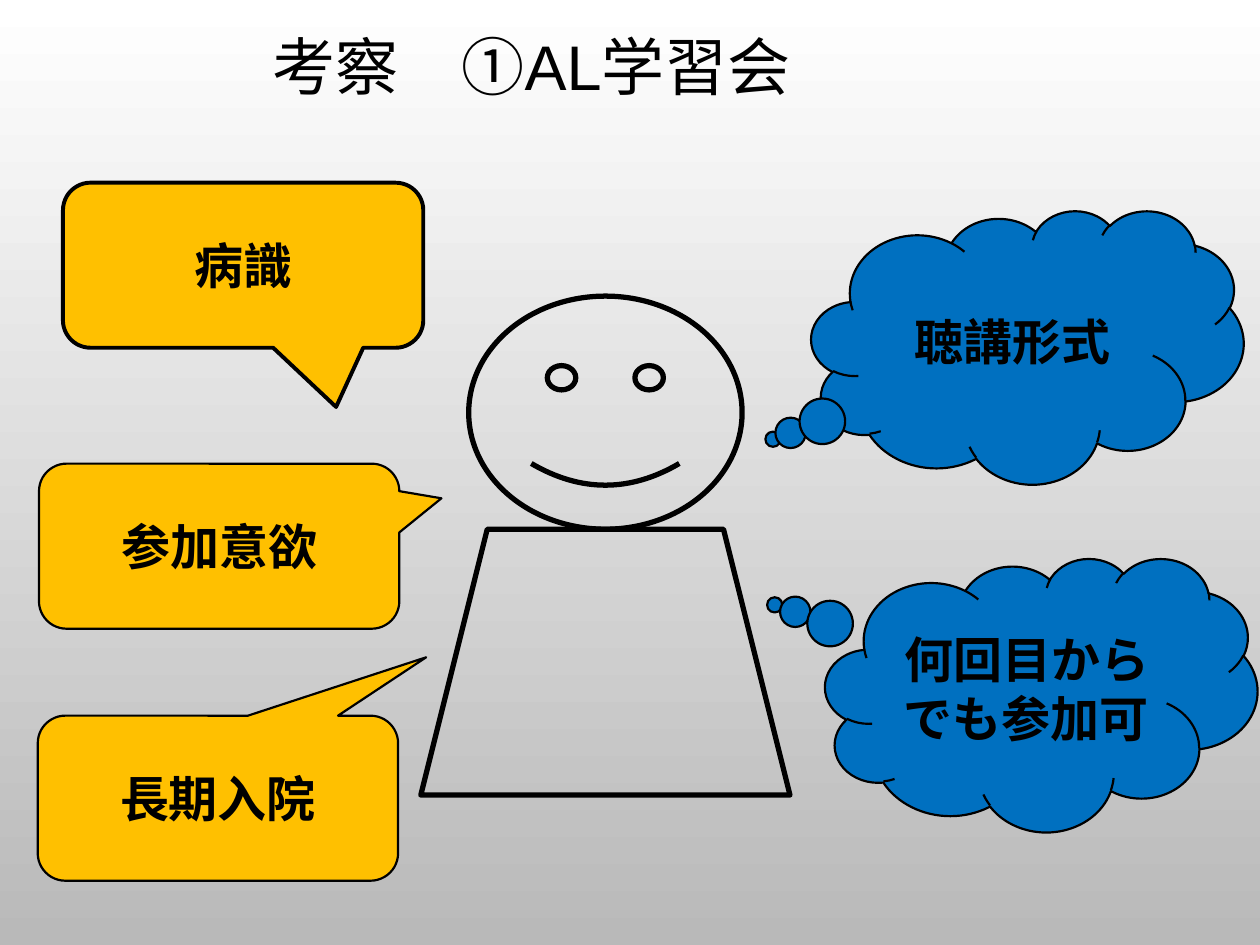
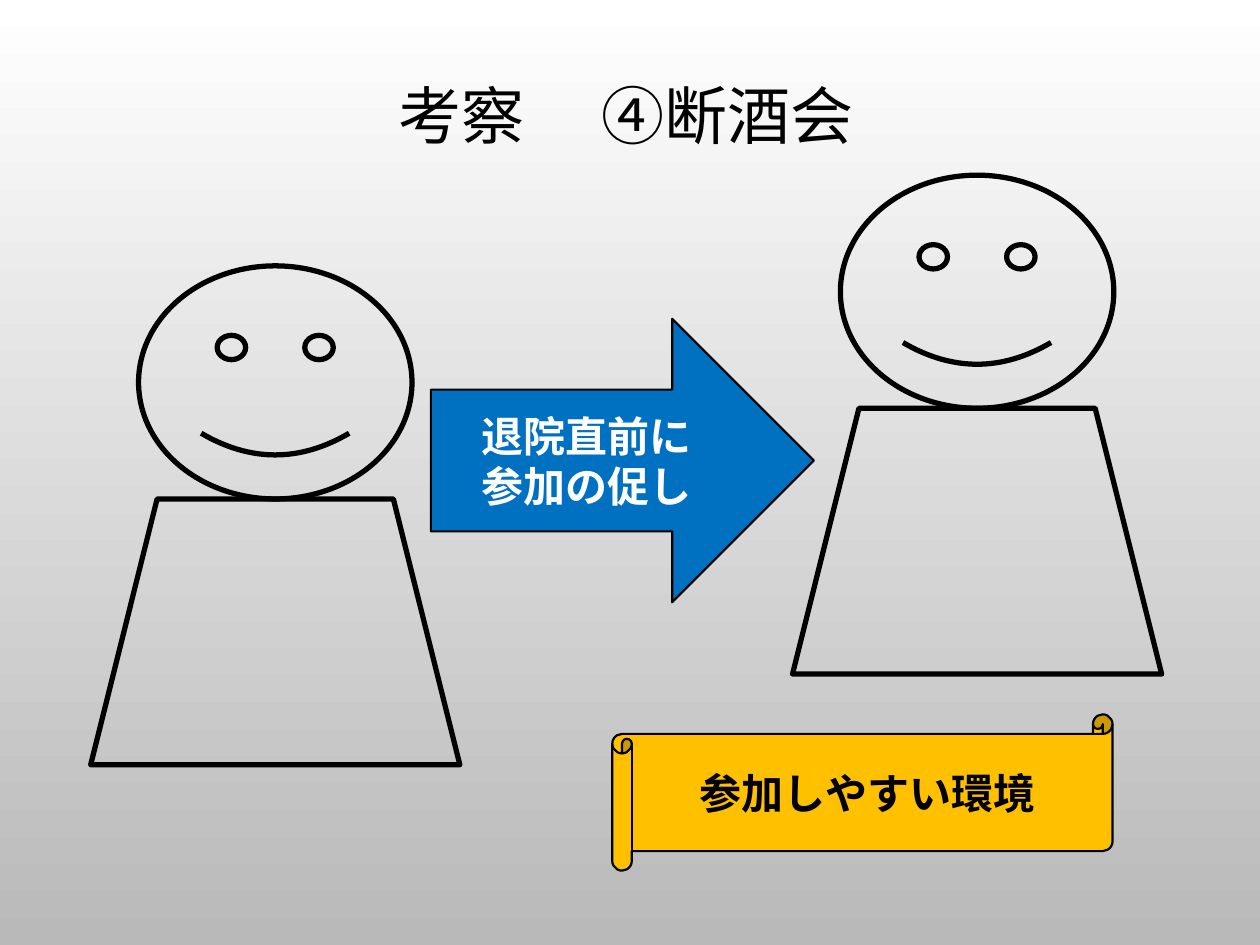
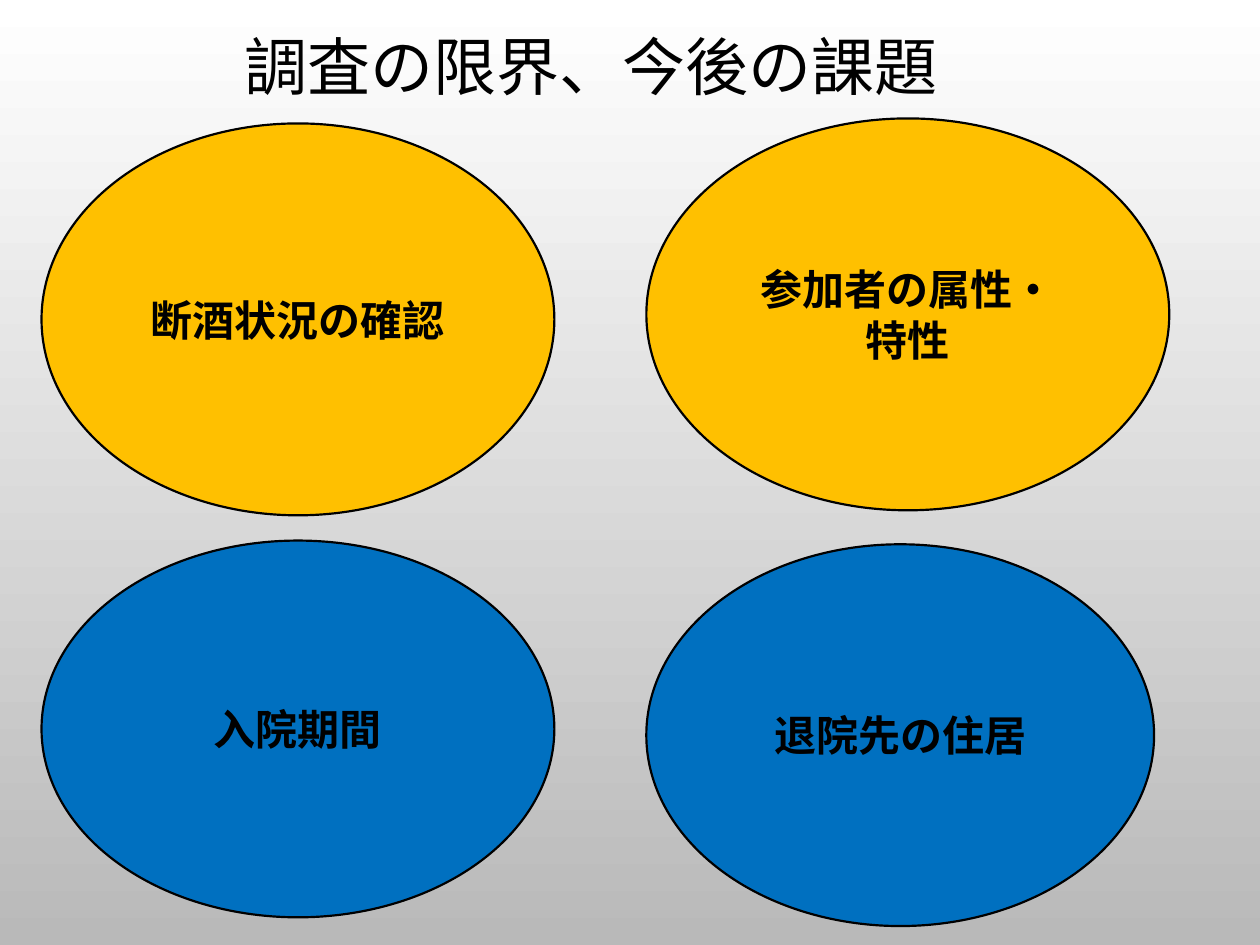
from pptx import Presentation
from pptx import util as u
from pptx.dml.color import RGBColor
from pptx.enum import shapes, text

# Shared look
BLACK, WHITE, GREY = "000000", "FFFFFF", "B9B9B9"
AMBER, BLUE = "FFC000", "0070C0"
FONT = "Cabin"
TITLE_SIZE = 36
THIN, MEDIUM, THICK = 1.25, 2.25, 3

# The slide is a grid of 100 columns by 75 rows
WIDTH, HEIGHT = u.Inches(10), u.Inches(7.5)
COLUMN, ROW = WIDTH / 100, HEIGHT / 75

KIND = shapes.MSO_SHAPE
CENTER = text.PP_ALIGN.CENTER


def color(hex_string):
    return RGBColor.from_string(hex_string)


def cells(left, top, width, height):
    """Turn columns and rows into slide lengths."""
    return (round(left * COLUMN), round(top * ROW),
            round(width * COLUMN), round(height * ROW))


def style_font(font, size, hex_string=BLACK, bold=False, name=FONT):
    font.name = name
    font.size = u.Pt(size)
    font.bold = bold
    font.color.rgb = color(hex_string)


def set_background(master):
    fill = master.background.fill
    fill.gradient()
    fill.gradient_angle = 270
    for stop, position, shade in zip(fill.gradient_stops, (0, 1), (WHITE, GREY)):
        stop.position = position
        stop.color.rgb = color(shade)


def add_slide(presentation, area, runs, align=CENTER,
              anchor=text.MSO_ANCHOR.MIDDLE, spacing=0.9):
    """Add a slide whose title is a list of (text, font name) runs."""
    slide = presentation.slides.add_slide(presentation.slide_layouts[5])
    title = slide.shapes.title
    title.left, title.top, title.width, title.height = cells(*area)
    frame = title.text_frame
    frame.auto_size = text.MSO_AUTO_SIZE.NONE
    frame.vertical_anchor = anchor
    paragraph = frame.paragraphs[0]
    paragraph.alignment = align
    paragraph.line_spacing = spacing
    for words, name in runs:
        run = paragraph.add_run()
        run.text = words
        style_font(run.font, TITLE_SIZE, name=name)
    return slide, paragraph


def add_outline(container, kind, area, line_width):
    shape = container.shapes.add_shape(kind, *cells(*area))
    shape.shadow.inherit = False
    shape.fill.background()
    shape.line.color.rgb = color(BLACK)
    shape.line.width = u.Pt(line_width)
    return shape


def add_label(slide, kind, area, lines, fill, size=24, font_color=BLACK,
              line_width=THIN, adjustments=()):
    """Add a filled shape with bold centred lines of text."""
    shape = add_outline(slide, kind, area, line_width)
    shape.fill.solid()
    shape.fill.fore_color.rgb = color(fill)
    for index, value in enumerate(adjustments):
        shape.adjustments[index] = value
    frame = shape.text_frame
    frame.word_wrap = True
    frame.vertical_anchor = text.MSO_ANCHOR.MIDDLE
    frame.text = lines
    for paragraph in frame.paragraphs:
        paragraph.alignment = CENTER
        style_font(paragraph.font, size, font_color, bold=True)


def add_person(slide, left, top):
    """Group a smiling head with the body below it."""
    group = slide.shapes.add_group_shape()
    add_outline(group, KIND.SMILEY_FACE, (left + 3.8, top, 21.7, 18.5), THICK)
    add_outline(group, KIND.TRAPEZOID, (left, top + 18.5, 29.3, 21.1), THICK)


def build_study_meeting(presentation):
    slide, title = add_slide(presentation, (7.5, 4.4, 69.4, 8.4),
                             [("考察　", FONT), ("①AL学習会", "Arial")])
    title.add_line_break()
    title.font.size = u.Pt(TITLE_SIZE)
    add_person(slide, 33.4, 23.5)

    # Patient factors
    for left, top, words, pointer, line_width in (
            (5, 14.5, "病識", (0.258, 0.859), MEDIUM),
            (3.1, 36.8, "参加意欲", (0.617, -0.29), THIN),
            (3, 56.8, "長期入院", (0.578, -0.854), THIN)):
        add_label(slide, KIND.ROUNDED_RECTANGULAR_CALLOUT,
                  (left, top, 28.6, 13.1), words, AMBER, 28,
                  line_width=line_width, adjustments=(*pointer, 0.167))

    # Meeting format
    for left, top, words, pointer in (
            (64.4, 16.7, "聴講形式", (-0.589, 0.337)),
            (65.5, 44.3, "何回目からでも参加可", (-0.617, -0.329))):
        add_label(slide, KIND.CLOUD_CALLOUT, (left, top, 34.3, 21.7),
                  words, BLUE, 28, adjustments=pointer)


def build_sobriety_group(presentation):
    slide, _ = add_slide(presentation, (7.2, 0.7, 85, 17.5),
                         [("考察　 ④断酒会", FONT)])
    add_person(slide, 7.2, 21.1)
    add_person(slide, 62.9, 13.9)
    add_label(slide, KIND.RIGHT_ARROW, (34.2, 25.3, 30.4, 22.5),
              "退院直前に\n参加の促し", BLUE, font_color=WHITE)
    add_label(slide, KIND.HORIZONTAL_SCROLL, (48.6, 56.7, 39.7, 12.4),
              "参加しやすい環境", AMBER)


def build_limits(presentation):
    slide, _ = add_slide(presentation, (18.4, 1.7, 60.7, 7.1),
                         [("調査の限界、今後の課題", FONT)],
                         text.PP_ALIGN.LEFT, text.MSO_ANCHOR.TOP, 1.0)
    for area, words, fill in (
            ((3.3, 9.8, 40.7, 31.1), "断酒状況の確認", AMBER),
            ((51.3, 43.2, 40.3, 30.3), "退院先の住居", BLUE),
            ((51.3, 9.4, 41.5, 31.1), "参加者の属性・\n特性", AMBER),
            ((3.3, 42.9, 40.7, 29.9), "入院期間", BLUE)):
        add_label(slide, KIND.OVAL, area, words, fill)


def main():
    presentation = Presentation()
    presentation.slide_width, presentation.slide_height = WIDTH, HEIGHT
    set_background(presentation.slide_master)
    build_study_meeting(presentation)
    build_sobriety_group(presentation)
    build_limits(presentation)
    presentation.save("out.pptx")


if __name__ == "__main__":
    main()
